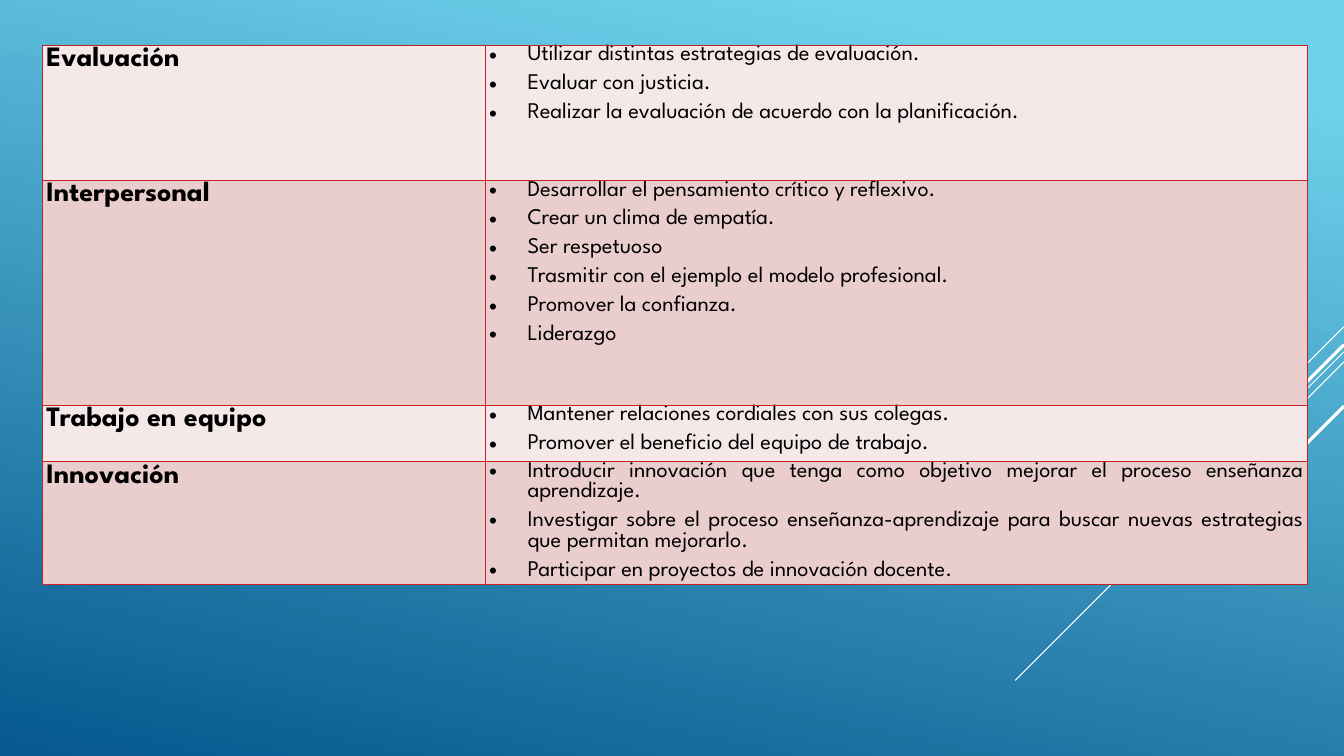
from dataclasses import dataclass

from lxml import etree
from pptx import Presentation
from pptx import util as u
from pptx.dml.color import RGBColor
from pptx.enum import shapes, text
from pptx.oxml.ns import qn


@dataclass(frozen=True)
class Theme:
    font: str = "League Spartan"
    ink: str = "000000"
    ray: str = "FFFFFF"
    border: str = "C62324"
    bands: tuple = ("F5E8E8", "EACDCD")
    sky: tuple = ((0.1, "6ED2EB"), (1, "06588E"))
    sky_angle: int = 258
    heading_size: int = 20
    item_size: int = 16


THEME = Theme()
WIDTH, HEIGHT = 13.33, 7.5
TABLE_BOX = (0.42, 0.45, 12.55)
COLUMNS = (0.35, 0.65)
ROW_HEIGHTS = (1.34, 2.23, 0.56, 1.22)
# Start height on the right edge, horizontal reach, line width
RAYS = ((3.24, 1, 0.75), (3.49, 3.26, 0.75), (3.59, 2.07, 0.75),
        (3.42, 1.91, 2.25), (4.03, 1.39, 2.25))
COMPETENCES = {
    "Evaluación": (
        "Utilizar distintas estrategias de evaluación.",
        "Evaluar con justicia.",
        "Realizar la evaluación de acuerdo con la planificación."),
    "Interpersonal": (
        "Desarrollar el pensamiento crítico y reflexivo.",
        "Crear un clima de empatía.",
        "Ser respetuoso",
        "Trasmitir con el ejemplo el modelo profesional.",
        "Promover la confianza.",
        "Liderazgo"),
    "Trabajo en equipo": (
        "Mantener relaciones cordiales con sus colegas.",
        "Promover el beneficio del equipo de trabajo."),
    "Innovación": (
        "Introducir innovación que tenga como objetivo mejorar el proceso "
        "enseñanza aprendizaje.",
        "Investigar sobre el proceso enseñanza-aprendizaje para buscar nuevas "
        "estrategias que permitan mejorarlo.",
        "Participar en proyectos de innovación docente."),
}


def apply(target, values):
    for name, value in values.items():
        setattr(target, name, value)


def paint_background(page):
    fill = page.background.fill
    fill.gradient()
    fill.gradient_angle = THEME.sky_angle
    for stop, (position, color) in zip(fill.gradient_stops, THEME.sky):
        stop.position = position
        stop.color.rgb = RGBColor.from_string(color)


def draw_rays(page, right):
    """Draw 45-degree lines falling leftwards from the given right edge."""
    for top, reach, width in RAYS:
        ends = (right, top, right - reach, top + reach)
        ray = page.shapes.add_connector(
            shapes.MSO_CONNECTOR.STRAIGHT, *map(u.Inches, ends))
        ray.line.color.rgb = RGBColor.from_string(THEME.ray)
        ray.line.width = u.Pt(width)
        etree.SubElement(ray._element.spPr, qn("a:effectLst"))


def style_cell(cell, color):
    apply(cell, {"margin_left": u.Inches(0.04), "margin_right": u.Inches(0.04),
                 "margin_top": 0, "margin_bottom": 0})
    cell.fill.solid()
    cell.fill.fore_color.rgb = RGBColor.from_string(color)
    properties = cell._tc.get_or_add_tcPr()
    for place, side in enumerate(("lnL", "lnR", "lnT", "lnB")):
        edge = etree.Element(qn(f"a:{side}"), w=str(u.Pt(1)))
        paint = etree.SubElement(edge, qn("a:solidFill"))
        etree.SubElement(paint, qn("a:srgbClr"), val=THEME.border)
        properties.insert(place, edge)


def write(para, words, size, bold=False):
    span = para.add_run()
    span.text = words
    apply(span.font, {"name": THEME.font, "size": u.Pt(size), "bold": bold})
    span.font.color.rgb = RGBColor.from_string(THEME.ink)


def write_items(frame, items):
    for number, item in enumerate(items):
        para = frame.add_paragraph() if number else frame.paragraphs[0]
        apply(para, {"alignment": text.PP_ALIGN.JUSTIFY, "space_after": u.Pt(6)})
        properties = para._p.get_or_add_pPr()
        indent = u.Inches(0.38)
        properties.set("marL", str(indent))
        properties.set("indent", str(-indent))
        etree.SubElement(properties, qn("a:buFont"), typeface="Arial")
        etree.SubElement(properties, qn("a:buChar"), char="•")
        write(para, item, THEME.item_size)


def add_competence_table(page, left, top, width):
    box = map(u.Inches, (left, top, width, sum(ROW_HEIGHTS)))
    table = page.shapes.add_table(len(COMPETENCES), len(COLUMNS), *box).table
    apply(table, {"first_row": False, "horz_banding": False})
    for column, share in zip(table.columns, COLUMNS):
        column.width = u.Inches(width * share)
    for number, (heading, items) in enumerate(COMPETENCES.items()):
        row = table.rows[number]
        row.height = u.Inches(ROW_HEIGHTS[number])
        name_cell, item_cell = row.cells
        for cell in (name_cell, item_cell):
            style_cell(cell, THEME.bands[number % len(THEME.bands)])
        para = name_cell.text_frame.paragraphs[0]
        para.line_spacing = 1.07
        write(para, heading, THEME.heading_size, bold=True)
        write_items(item_cell.text_frame, items)


def main():
    deck = Presentation()
    apply(deck, {"slide_width": u.Inches(WIDTH), "slide_height": u.Inches(HEIGHT)})
    page = deck.slides.add_slide(deck.slide_layouts[6])
    paint_background(page)
    draw_rays(page, WIDTH)
    add_competence_table(page, *TABLE_BOX)
    deck.save("out.pptx")


if __name__ == "__main__":
    main()
